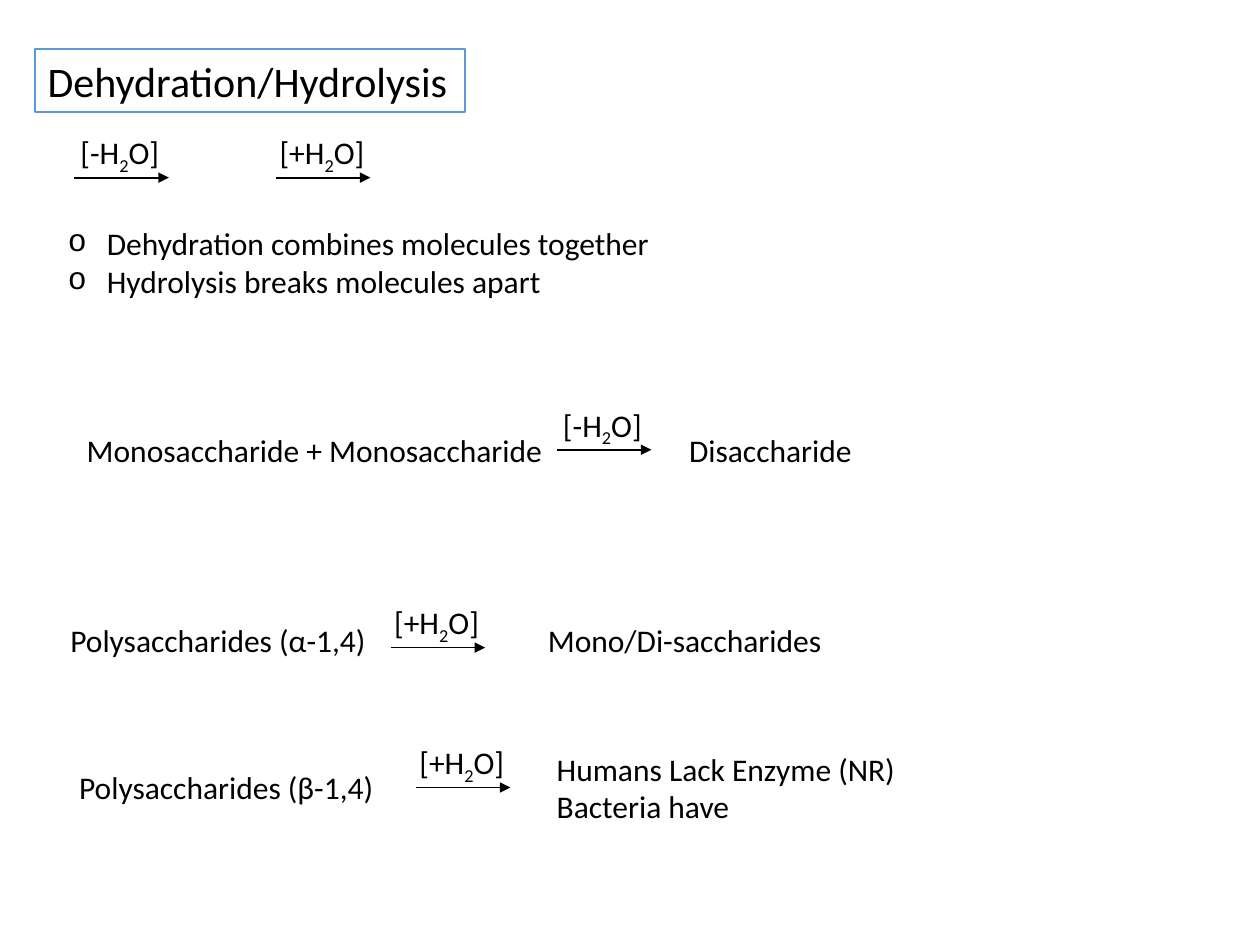
from lxml import etree
from pptx import Presentation
from pptx.dml.color import RGBColor
from pptx.enum.shapes import MSO_CONNECTOR, MSO_SHAPE
from pptx.enum.text import MSO_ANCHOR, MSO_AUTO_SIZE, PP_ALIGN
from pptx.oxml.ns import qn
from pptx.util import Inches, Pt

LINE = MSO_CONNECTOR.STRAIGHT
RECT = MSO_SHAPE.RECTANGLE
GROW = MSO_AUTO_SIZE.SHAPE_TO_FIT_TEXT
MIDDLE = MSO_ANCHOR.MIDDLE
LEFT = PP_ALIGN.LEFT
COLORS = {name: RGBColor.from_string(code) for name, code in {
    "ink": "000000", "paper": "FFFFFF", "frame": "5B9BD5"}.items()}

deck = Presentation()
deck.slide_width, deck.slide_height = Inches(10), Inches(7.5)
slide = deck.slides.add_slide(deck.slide_layouts[6])


def style(shape, size=18, wrap=False):
    frame = shape.text_frame
    frame.word_wrap = wrap
    frame.auto_size = GROW
    for para in frame.paragraphs:
        para.alignment = LEFT
        for run in para.runs:
            run.font.name = "Calibri"
            run.font.size = Pt(size)
            run.font.color.rgb = COLORS["ink"]


def react(shapes, sign, x, y):
    width, inset = (0.84, 0.05) if sign == "-" else (0.89, 0.07)
    start, level = Inches(x + inset), Inches(y + 0.4)
    arrow = shapes.add_connector(LINE, start, level, start + Inches(0.75), level)
    arrow.line.color.rgb = COLORS["ink"]
    arrow.line.width = Pt(1)
    etree.SubElement(arrow.line._get_or_add_ln(), qn("a:tailEnd"), type="triangle")
    etree.SubElement(arrow._element.spPr, qn("a:effectLst"))
    label = shapes.add_textbox(Inches(x), Inches(y), Inches(width), Inches(0.4))
    para = label.text_frame.paragraphs[0]
    for part in (f"[{sign}H", "2", "O]"):
        para.add_run().text = part
    para.runs[1].font._element.set("baseline", "-25000")
    style(label)


title = slide.shapes.add_shape(RECT, Inches(0.28), Inches(0.39), Inches(3.41), Inches(0.5))
title.shadow.inherit = False
title.fill.solid()
title.fill.fore_color.rgb = COLORS["paper"]
title.line.color.rgb = COLORS["frame"]
title.line.width = Pt(1)
title.text_frame.text = "Dehydration/Hydrolysis"
title.text_frame.vertical_anchor = MIDDLE
style(title, 24)

for sign, x in (("-", 0.54), ("+", 2.12)):
    react(slide.shapes, sign, x, 1.01)

notes = slide.shapes.add_textbox(Inches(0.44), Inches(1.73), Inches(5), Inches(0.71))
notes.text_frame.text = "Dehydration combines molecules together\nHydrolysis breaks molecules apart"
style(notes, wrap=True)
for para in notes.text_frame.paragraphs:
    props = para._p.get_or_add_pPr()
    props.set("marL", str(Inches(0.31)))
    props.set("indent", str(-Inches(0.31)))
    etree.SubElement(props, qn("a:buFont"), typeface="Courier New")
    etree.SubElement(props, qn("a:buChar"), char="o")

for text, x, y, width, height in (
    ("Monosaccharide + Monosaccharide", 0.59, 3.37, 3.86, 0.4),
    ("Disaccharide", 5.37, 3.37, 1.51, 0.4),
    ("Polysaccharides (α-1,4)", 0.46, 4.88, 2.57, 0.4),
    ("Mono/Di-saccharides", 4.25, 4.88, 2.4, 0.4),
    ("Polysaccharides (β-1,4)", 0.53, 6.05, 2.57, 0.4),
    ("Humans Lack Enzyme (NR)\nBacteria have", 4.32, 5.9, 2.92, 0.71),
):
    box = slide.shapes.add_textbox(Inches(x), Inches(y), Inches(width), Inches(height))
    box.text_frame.text = text
    style(box)

for sign, x, y in (("-", 4.37, 3.17), ("+", 3.03, 4.74), ("+", 3.23, 5.85)):
    react(slide.shapes.add_group_shape().shapes, sign, x, y)

deck.save("out.pptx")
